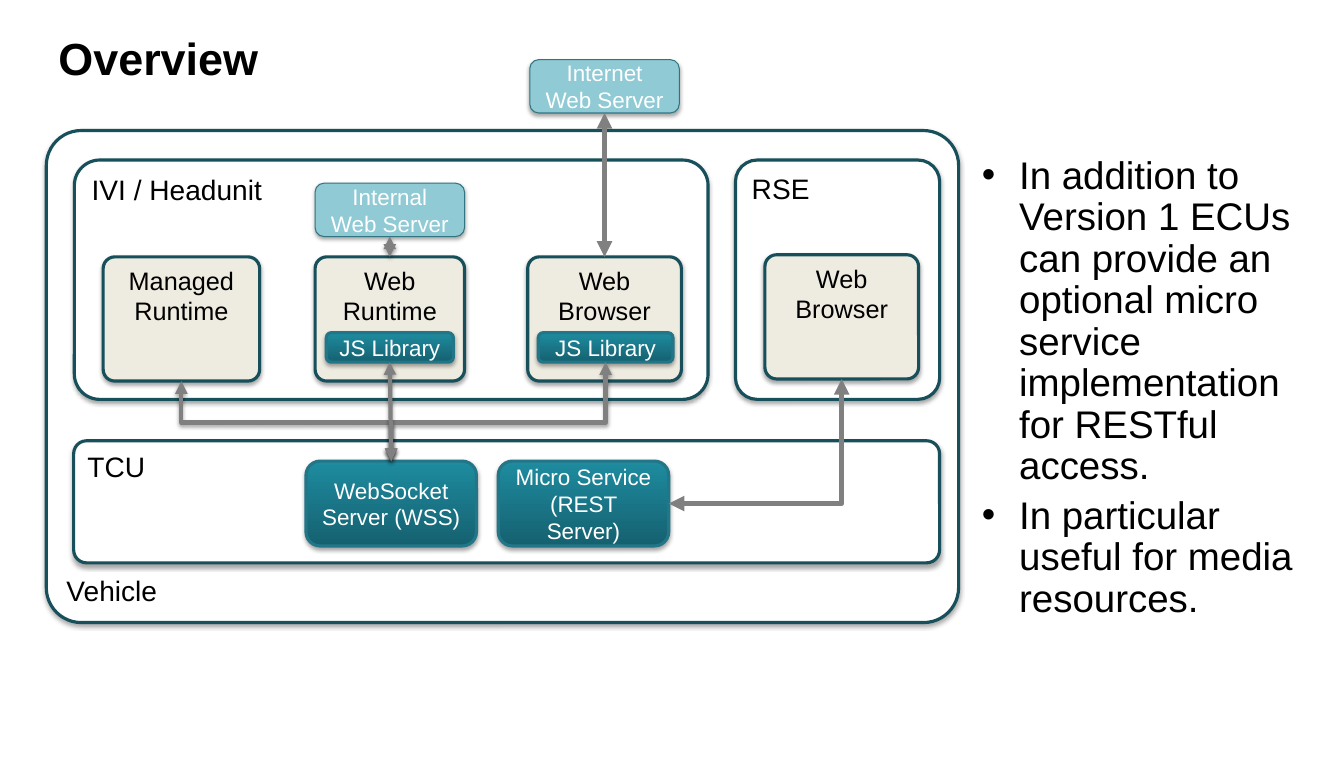
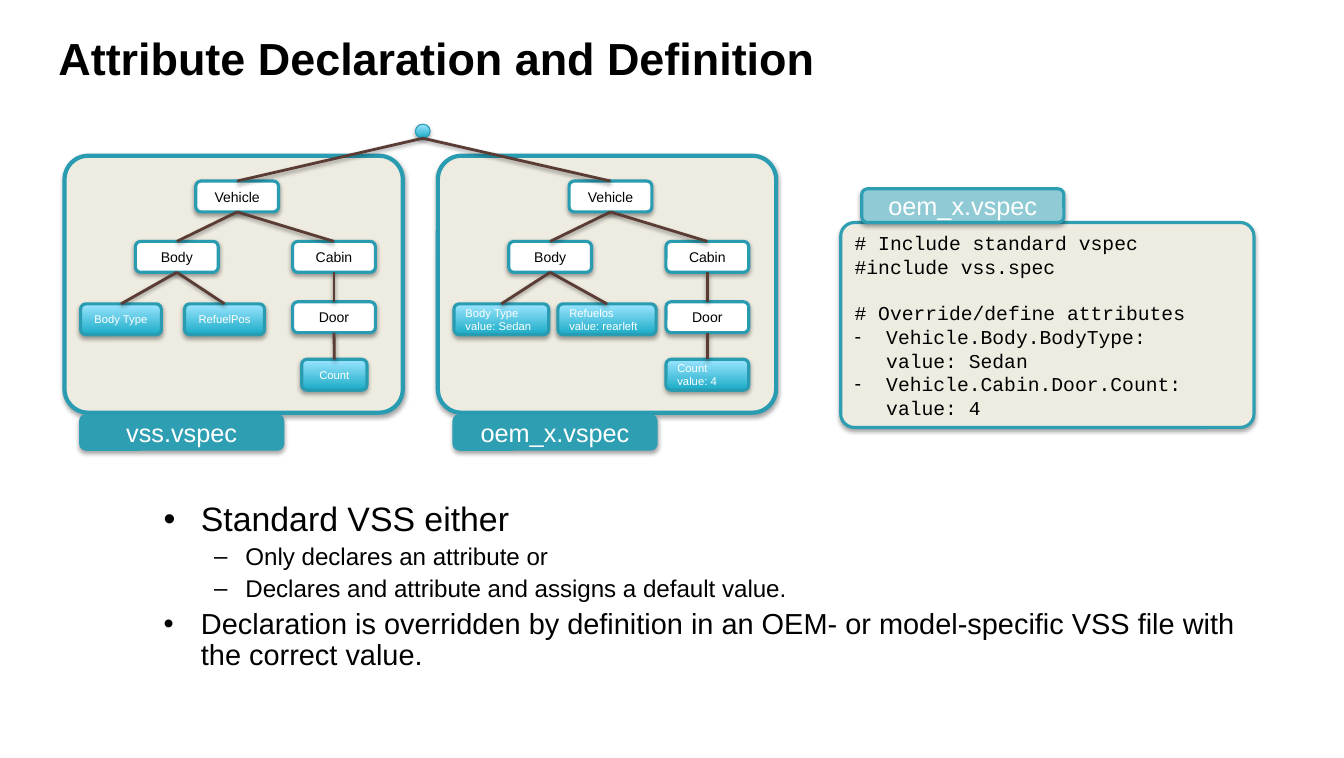
from copy import deepcopy
from typing import NamedTuple

from lxml import etree
from pptx import Presentation
from pptx.dml.color import RGBColor
from pptx.enum import shapes, text
from pptx.oxml.ns import qn
from pptx.util import Pt

COLOURS = {
    "black": "000000", "white": "FFFFFF", "cream": "EEECE1", "grey": "808080",
    "deep": "174F5A", "service_dark": "156170", "service_light": "1E8B9F",
    "service_edge": "237687", "pale": "8FCAD5", "pale_edge": "317581",
    "teal": "299CB2", "tab": "2E9EB3", "leaf_dark": "1AABC6",
    "leaf_light": "9CE5FF", "branch": "5A3C34",
}
LEFT, CENTER = text.PP_ALIGN.LEFT, text.PP_ALIGN.CENTER
TOP, MIDDLE, BOTTOM = (text.MSO_ANCHOR.TOP, text.MSO_ANCHOR.MIDDLE,
                       text.MSO_ANCHOR.BOTTOM)
ROUND = shapes.MSO_SHAPE.ROUNDED_RECTANGLE


def style(fill, line, weight=2.25, radius=0.167, size=16, colour="white",
          align=CENTER, anchor=MIDDLE, font="Arial"):
    return dict(fill=fill, line=line, weight=weight, radius=radius, size=size,
                colour=colour, align=align, anchor=anchor, font=font)


AREA = style("white", "deep", radius=0.106, size=20, colour="black",
             align=LEFT, anchor=TOP)
VEHICLE = AREA | dict(radius=0.071, anchor=BOTTOM)
CLIENT = style("cream", "deep", radius=0.094, size=18, colour="black", anchor=TOP)
SERVICE = style(("service_dark", "service_light"), "service_edge")
WEB_SERVER = style("pale", "pale_edge", weight=0.75)
PANEL = style("cream", "teal", weight=3, radius=0.092)
BRANCH = style("white", "teal", size=10, colour="black")
LEAF = style(("leaf_dark", "leaf_light"), "teal", size=8)
VALUE_LEAF = LEAF | dict(align=LEFT)
ROOT = LEAF | dict(weight=0.75, radius=None)
FILE_TAB = style("tab", "tab", size=18)
CODE_TAB = FILE_TAB | dict(fill="pale")
CODE = style("cream", "tab", radius=0.067, size=14, colour="black",
             align=LEFT, font="Courier New")
BODY = dict(size=20, colour="black", align=LEFT, anchor=TOP, font="Arial")
TITLE = BODY | dict(size=32, anchor=MIDDLE, bold=True)


class Box(NamedTuple):
    x: float
    y: float
    w: float
    h: float

    def inner(self, dx, dy, w, h):
        return Box(self.x + dx, self.y + dy, w, h)

    @property
    def top(self):
        return self.x + self.w / 2, self.y

    @property
    def bottom(self):
        return self.x + self.w / 2, self.y + self.h

    @property
    def right(self):
        return self.x + self.w, self.y + self.h / 2


def rgb(name):
    return RGBColor.from_string(COLOURS[name])


def assign(target, **values):
    for name, value in values.items():
        setattr(target, name, value)


def add_element(parent, tag, **attributes):
    child = etree.SubElement(parent, qn(tag))
    for name, value in attributes.items():
        child.set(name, str(value))
    return child


def cast_shadow(effects, alpha, distance):
    shadow = add_element(effects, "a:outerShdw", blurRad=Pt(3.1), dist=Pt(distance),
                         dir=5400000, rotWithShape=0)
    shade = add_element(shadow, "a:srgbClr", val=COLOURS["black"])
    add_element(shade, "a:alpha", val=alpha * 1000)


# Text: each item is a string or a dict that overrides the look
def write(frame, items, look):
    assign(frame, word_wrap=True, vertical_anchor=look["anchor"])
    for index, item in enumerate(items):
        item = look | (item if isinstance(item, dict) else {"text": item})
        paragraph = frame.paragraphs[0] if index == 0 else frame.add_paragraph()
        paragraph.text = item["text"]
        assign(paragraph, alignment=item["align"], level=item.get("level", 0),
               line_spacing=item.get("spacing"))
        if index and "before" in item:
            paragraph.space_before = Pt(item["before"])
        if "bullet" in item:
            props = paragraph._p.get_or_add_pPr()
            props.set("marL", str(Pt(item["margin"])))
            props.set("indent", str(-Pt(item["hang"])))
            add_element(props, "a:buFont", typeface="Arial")
            add_element(props, "a:buChar", char=item["bullet"])
        for run in paragraph.runs:
            assign(run.font, name=item["font"], size=Pt(item["size"]),
                   bold=item.get("bold", False))
            run.font.color.rgb = rgb(item["colour"])
        for line_break in paragraph._p.findall(qn("a:br")):
            line_break.append(deepcopy(paragraph.runs[0]._r.rPr))


def add_text(slide, box, items, look):
    write(slide.shapes.add_textbox(*map(Pt, box)).text_frame, items, look)


def add_part(slide, box, look, *items, outline=ROUND):
    part = slide.shapes.add_shape(outline, *map(Pt, box))
    if look["radius"] is not None:
        part.adjustments[0] = look["radius"]
    if isinstance(look["fill"], tuple):
        part.fill.gradient()
        part.fill.gradient_angle = 90
        for stop, name in zip(part.fill.gradient_stops, look["fill"]):
            stop.color.rgb = rgb(name)
    else:
        part.fill.solid()
        part.fill.fore_color.rgb = rgb(look["fill"])
    part.line.color.rgb = rgb(look["line"])
    part.line.width = Pt(look["weight"])
    part.shadow.inherit = False
    cast_shadow(part._element.spPr.find(qn("a:effectLst")), 35, 1.8)
    write(part.text_frame, items, look)
    return box


# Lines
def add_line(slide, start, end, colour, weight, shadow=True, arrows=False,
             kind=shapes.MSO_CONNECTOR.STRAIGHT):
    line = slide.shapes.add_connector(kind, *map(Pt, (*start, *end)))
    line.line.color.rgb = rgb(colour)
    line.line.width = Pt(weight)
    props = line._element.spPr
    if arrows:
        for tag in ("a:headEnd", "a:tailEnd"):
            add_element(props.get_or_add_ln(), tag, type="triangle")
    effects = add_element(props, "a:effectLst")
    if shadow:
        cast_shadow(effects, 38, 1.6)
    return props


def add_arrow(slide, start, end, weight=3, shadow=True, **options):
    return add_line(slide, start, end, "grey", weight, shadow, True, **options)


def add_rail_arrow(slide, start, end, rail):
    """Runs down to the rail height, along it, then down to the end."""
    (x1, y1), (x2, y2) = start, end
    mid_x, mid_y = (x1 + x2) / 2, (y1 + y2) / 2
    half_w, half_h = (y2 - y1) / 2, (x1 - x2) / 2
    props = add_arrow(slide, (mid_x - half_w, mid_y - half_h),
                      (mid_x + half_w, mid_y + half_h),
                      kind=shapes.MSO_CONNECTOR.ELBOW)
    props.find(qn("a:xfrm")).set("rot", "5400000")
    share = round((rail - y1) / (y2 - y1) * 100000)
    guides = props.find(qn("a:prstGeom")).find(qn("a:avLst"))
    add_element(guides, "a:gd", name="adj1", fmla=f"val {share}")


def add_corner_arrow(slide, start, end):
    props = add_arrow(slide, start, end, 3.75, False,
                      kind=shapes.MSO_CONNECTOR.ELBOW)
    props.find(qn("a:prstGeom")).set("prst", "bentConnector2")


# Slide 1: vehicle architecture
def vehicle_diagram(slide, box):
    def part(dx, dy, w, h, look, *items):
        return add_part(slide, box.inner(dx, dy, w, h), look, *items)

    add_part(slide, box, VEHICLE, "Vehicle")
    part(19.5, 221, 617, 87, AREA, "TCU")
    part(20, 21, 451.5, 170.5, AREA, "IVI / Headunit")
    part(491, 21, 145.5, 170.5, AREA, "RSE")

    # Clients
    managed = part(40.5, 90, 111.5, 88.5, CLIENT, "Managed Runtime")
    runtime = part(191.5, 90, 106.5, 88.5, CLIENT, "Web Runtime")
    browser = part(343, 90, 109.5, 88.5, CLIENT, "Web Browser")
    rear_browser = part(512, 88.5, 109.5, 88.5, CLIENT, "Web Browser")
    runtime_js = part(199.5, 144, 90.5, 21, SERVICE, "JS Library")
    browser_js = part(350.5, 144, 96, 21, SERVICE, "JS Library")

    # Servers
    socket = part(185, 235.5, 121.5, 60.5, SERVICE, "WebSocket Server (WSS)")
    micro = part(322, 235.5, 121.5, 60.5, SERVICE, "Micro Service", "(REST Server)")
    internal = part(191.5, 37.5, 106.5, 38, WEB_SERVER, "Internal Web Server")
    internet = part(344.5, -50.5, 106.5, 38, WEB_SERVER, "Internet Web Server")

    # Traffic
    for client in (managed, browser_js):
        add_rail_arrow(slide, client.bottom, socket.top, box.y + 208)
    add_arrow(slide, runtime_js.bottom, socket.top)
    add_arrow(slide, internal.bottom, runtime.top)
    add_arrow(slide, browser.top, internet.bottom, 3.75, False)
    add_corner_arrow(slide, micro.right, rear_browser.bottom)


# Slide 2: signal tree of one file; returns its top node
def signal_tree(slide, box, file_name, leaf_look, leaves):
    def node(dx, dy, look, name, w=59):
        return add_part(slide, box.inner(dx, dy, w, 22), look, *name.split("\n"))

    add_part(slide, box, PANEL)
    vehicle = node(93.5, 18, BRANCH, "Vehicle")
    body = node(50.5, 61, BRANCH, "Body")
    cabin = node(162.5, 61, BRANCH, "Cabin")
    door = node(162.5, 104, BRANCH, "Door")
    body_type, refuel, count = [
        node(dx, dy, leaf_look, name, w)
        for (name, dx, w), dy in zip(leaves, (105.5, 105.5, 145))]
    for parent, child in ((vehicle, body), (vehicle, cabin), (body, body_type),
                          (body, refuel), (cabin, door), (door, count)):
        add_line(slide, parent.bottom, child.top, "branch", 2)
    add_part(slide, box.inner(11.5, 185, 144, 24), FILE_TAB, file_name)
    return vehicle


def code_panel(slide, box, file_name, lines):
    add_part(slide, box, CODE, *lines)
    add_part(slide, box.inner(15, -24, 144, 24), CODE_TAB, file_name)


def bullet(words, size, before=5.6):
    return dict(text=words, size=size, before=before, spacing=0.9,
                bullet="•", margin=26.6, hang=26.6)


def sub_bullet(words):
    return bullet(words, 17.2, 4) | dict(level=1, bullet="–", margin=58.3, hang=22.3)


def code_item(words):
    return dict(text=words, bullet="-", margin=22.5, hang=22.5)


def new_slide(deck, title):
    slide = deck.slides.add_slide(deck.slide_layouts[6])
    add_text(slide, Box(34.5, 14.5, 862, 52.5), [title], TITLE)
    return slide


def overview(deck):
    slide = new_slide(deck, "Overview")
    vehicle_diagram(slide, Box(33, 93, 650, 350.5))
    add_text(slide, Box(692.5, 107.5, 250.5, 355.5), [
        bullet("In addition to Version 1 ECUs can provide an optional micro "
               "service implementation for RESTful access.", 27.4),
        bullet("In particular useful for media resources.", 27.4),
    ], BODY)


def attributes_slide(deck):
    slide = new_slide(deck, "Attribute Declaration and Definition")
    root = add_part(slide, Box(296, 88.5, 10.5, 10), ROOT,
                    outline=shapes.MSO_SHAPE.FLOWCHART_CONNECTOR)
    trees = (
        (46, "vss.vspec", LEAF,
         (("Body Type", 11.5, 57.5), ("RefuelPos", 85.5, 57), ("Count", 169, 46.5))),
        (312, "oem_x.vspec", VALUE_LEAF,
         (("Body Type\nvalue: Sedan", 11.5, 67.5),
          ("Refuelos\nvalue: rearleft", 85.5, 70), ("Count\nvalue: 4", 162.5, 59))),
    )
    for left, file_name, leaf_look, leaves in trees:
        vehicle = signal_tree(slide, Box(left, 111, 241, 183), file_name,
                              leaf_look, leaves)
        add_line(slide, root.bottom, vehicle.top, "branch", 2)
    code_panel(slide, Box(599, 158.5, 294.5, 146), "oem_x.vspec", [
        "# Include standard vspec",
        "#include vss.spec",
        dict(text="# Override/define attributes", before=16.5),
        code_item("Vehicle.Body.BodyType:\vvalue: Sedan"),
        code_item("Vehicle.Cabin.Door.Count:\vvalue: 4"),
    ])
    add_text(slide, Box(109.5, 354.5, 800, 137.5), [
        bullet("Standard VSS either", 24.1),
        sub_bullet("Only declares an attribute or"),
        sub_bullet("Declares and attribute and assigns a default value."),
        bullet("Declaration is overridden by definition in an OEM- or "
               "model-specific VSS file with the correct value.", 20.6, 4.8),
    ], BODY)


def main():
    deck = Presentation()
    assign(deck, slide_width=Pt(957.6), slide_height=Pt(540))
    overview(deck)
    attributes_slide(deck)
    deck.save("out.pptx")


if __name__ == "__main__":
    main()
